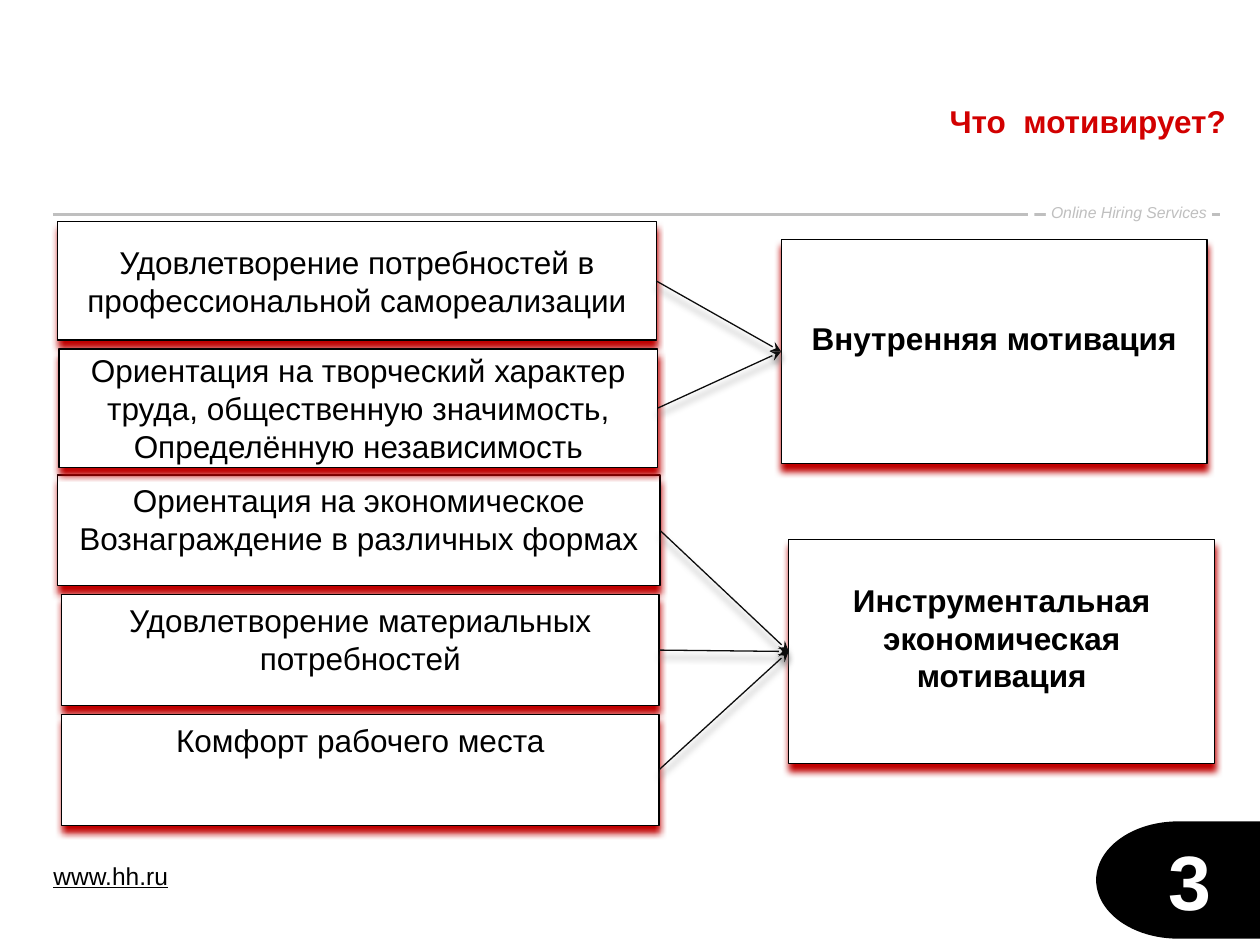
from dataclasses import dataclass
from typing import Any

import lxml.etree
import pptx
import pptx.dml.color
import pptx.enum.shapes
import pptx.enum.text
import pptx.oxml.ns
import pptx.util

Pt = pptx.util.Pt
Color = pptx.dml.color.RGBColor.from_string
Kind = pptx.enum.shapes.MSO_SHAPE
Align = pptx.enum.text.PP_ALIGN
Anchor = pptx.enum.text.MSO_ANCHOR
qn = pptx.oxml.ns.qn


@dataclass(frozen=True)
class Theme:
    font: str = "Arial"
    black: str = "000000"
    white: str = "FFFFFF"
    gray: str = "BFBFBF"
    title_red: str = "D20000"
    glow_red: str = "C00000"
    arrow: str = "0D0D0D"
    arrow_shadow: str = "808080"
    text_size: float = 18
    link_size: float = 14
    tag_size: float = 9
    number_size: float = 44
    thin: float = 0.75
    rule: float = 1.5


@dataclass(frozen=True)
class Area:
    left: float
    top: float
    width: float
    height: float

    def lengths(self) -> tuple:
        return Pt(self.left), Pt(self.top), Pt(self.width), Pt(self.height)


@dataclass(frozen=True)
class Box:
    area: Area
    lines: tuple[str, ...]
    anchor: Any = Anchor.MIDDLE
    bold: bool = False
    bottom_inset: float = 3.6


@dataclass(frozen=True)
class Group:
    target: Box
    sources: tuple[Box, ...]


THEME = Theme()

# Motives on the left, grouped by the kind of motivation on the right
GROUPS = (
    Group(
        Box(Area(446.4, 136.8, 243.4, 128.2), ("Внутренняя мотивация",),
            bold=True, bottom_inset=19.7),
        (
            Box(Area(33, 126.7, 342, 67.7),
                ("Удовлетворение потребностей в", "профессиональной самореализации")),
            Box(Area(33.8, 199.4, 342, 67.7),
                ("Ориентация на творческий характер", "труда, общественную значимость,",
                 "Определённую независимость")),
        ),
    ),
    Group(
        Box(Area(450.7, 308.2, 243.4, 128.2),
            ("Инструментальная", "экономическая", "мотивация"),
            bold=True, bottom_inset=19.7),
        (
            Box(Area(33, 271.4, 344.2, 63.4),
                ("Ориентация на экономическое", "Вознаграждение в различных формах"),
                Anchor.TOP),
            Box(Area(35.3, 339.8, 341.3, 63.4),
                ("Удовлетворение материальных", "потребностей"), Anchor.TOP),
            Box(Area(35.3, 408.2, 341.3, 63.4), ("Комфорт рабочего места",), Anchor.TOP),
        ),
    ),
)


def apply(target: Any, values: dict[str, Any]) -> None:
    for name, value in values.items():
        setattr(target, name, value)


def write(shape: Any, lines: tuple[str, ...], size: float, color: str,
          align: Any = Align.CENTER, frame_format: dict | None = None,
          **font_format: Any) -> None:
    frame = shape.text_frame
    frame.text = "\n".join(lines)
    apply(frame, {"word_wrap": False, "vertical_anchor": Anchor.TOP} | (frame_format or {}))
    for paragraph in frame.paragraphs:
        paragraph.alignment = align
        apply(paragraph.font, {"name": THEME.font, "size": Pt(size)} | font_format)
        paragraph.font.color.rgb = Color(color)


def insets(side: float, vertical: float = 0) -> dict[str, Any]:
    return {"margin_left": Pt(side), "margin_right": Pt(side),
            "margin_top": Pt(vertical), "margin_bottom": Pt(vertical)}


def add_shadow(shape: Any, color: str) -> None:
    """Soft shadow straight below a shape or connector."""
    properties = shape._element.spPr
    effects = properties.find(qn("a:effectLst"))
    if effects is None:
        effects = lxml.etree.SubElement(properties, qn("a:effectLst"))
    shadow = lxml.etree.SubElement(
        effects, qn("a:outerShdw"), blurRad=str(Pt(4)), dist=str(Pt(4)),
        dir="5400000", algn="t", rotWithShape="0")
    lxml.etree.SubElement(shadow, qn("a:srgbClr"), val=color)


def add_block(slide: Any, kind: Any, area: Area, fill: str) -> Any:
    shape = slide.shapes.add_shape(kind, *area.lengths())
    shape.shadow.inherit = False
    shape.fill.solid()
    shape.fill.fore_color.rgb = Color(fill)
    shape.line.fill.background()
    return shape


def add_box(slide: Any, box: Box) -> Any:
    shape = add_block(slide, Kind.RECTANGLE, box.area, THEME.white)
    shape.line.color.rgb = Color(THEME.black)
    shape.line.width = Pt(THEME.thin)
    add_shadow(shape, THEME.glow_red)
    write(shape, box.lines, THEME.text_size, THEME.black, bold=box.bold,
          frame_format={"vertical_anchor": box.anchor, "margin_bottom": Pt(box.bottom_inset)})
    return shape


def add_line(slide: Any, color: str, width: float, ends: tuple = (0, 0, 0, 0)) -> Any:
    line = slide.shapes.add_connector(
        pptx.enum.shapes.MSO_CONNECTOR.STRAIGHT, *(Pt(value) for value in ends))
    line.line.color.rgb = Color(color)
    line.line.width = Pt(width)
    lxml.etree.SubElement(line._element.spPr, qn("a:effectLst"))
    return line


def add_arrow(slide: Any, source: Any, target: Any) -> None:
    arrow = add_line(slide, THEME.arrow, THEME.thin)
    arrow.begin_connect(source, 3)
    arrow.end_connect(target, 1)
    outline = arrow._element.spPr.find(qn("a:ln"))
    lxml.etree.SubElement(outline, qn("a:tailEnd"), type="stealth")
    add_shadow(arrow, THEME.arrow_shadow)


def add_frame(slide: Any) -> None:
    # Header rule, broken by the tagline
    add_line(slide, THEME.gray, THEME.rule, (30.2, 122.4, 697, 122.4))
    tagline = add_block(slide, Kind.RECTANGLE, Area(597.6, 116, 95, 10.8), THEME.white)
    write(tagline, ("Online Hiring Services",), THEME.tag_size, THEME.gray,
          frame_format=insets(2.9), italic=True)
    add_block(slide, Kind.RECTANGLE, Area(587.5, 118.8, 3.6, 6.5), THEME.white)

    # Site address
    address = slide.shapes.add_textbox(*Area(23, 488.2, 80.6, 24.5).lengths())
    write(address, ("www.hh.ru",), THEME.link_size, THEME.black, underline=True)

    # Page number tab
    tab = add_block(slide, Kind.FLOWCHART_DELAY, Area(626.4, 469.4, 93.6, 67), THEME.black)
    tab._element.spPr.xfrm.set("flipH", "1")
    write(tab, ("3",), THEME.number_size, THEME.white,
          frame_format={"vertical_anchor": Anchor.MIDDLE}, bold=True)


def main() -> None:
    presentation = pptx.Presentation()
    apply(presentation, {"slide_width": Pt(720), "slide_height": Pt(540)})
    slide = presentation.slides.add_slide(presentation.slide_layouts[5])
    add_frame(slide)

    # Title
    title = slide.shapes.title
    area = Area(430.6, 58.3, 270, 40.3)
    apply(title, dict(zip(("left", "top", "width", "height"), area.lengths())))
    write(title, ("Что  мотивирует?",), THEME.text_size, THEME.title_red, Align.RIGHT,
          insets(0) | {"word_wrap": True, "auto_size": pptx.enum.text.MSO_AUTO_SIZE.NONE},
          bold=True)

    # Lower group first, so that shadows of the upper boxes fall over it
    for group in reversed(GROUPS):
        sources = [add_box(slide, box) for box in group.sources]
        target = add_box(slide, group.target)
        for source in sources:
            add_arrow(slide, source, target)

    presentation.save("out.pptx")


if __name__ == "__main__":
    main()
